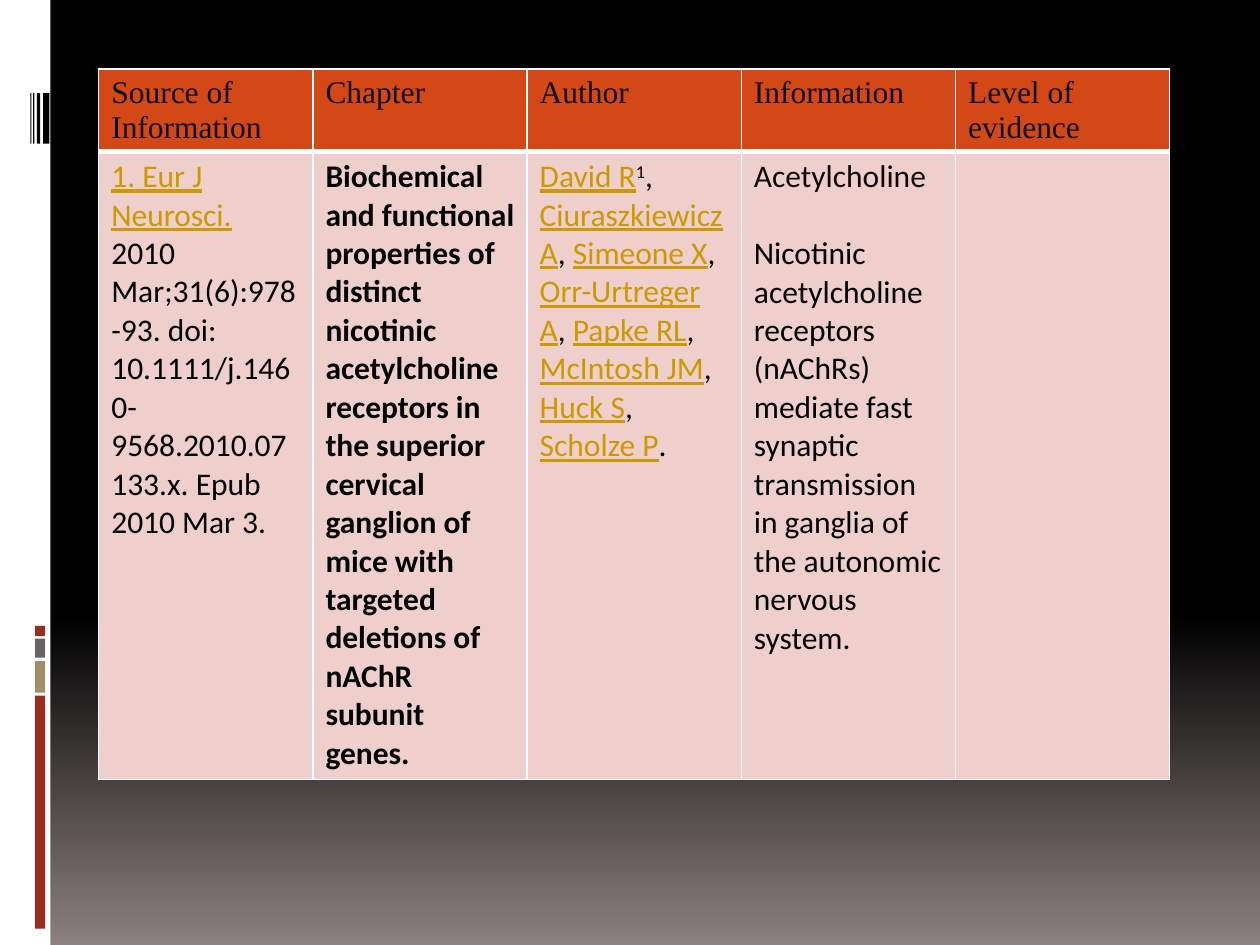
"""Build the literature evidence table slide."""
from copy import deepcopy

from lxml import etree
from pptx import Presentation
from pptx import util as u
from pptx.dml.color import RGBColor
from pptx.enum import shapes
from pptx.oxml.ns import qn

WHITE = RGBColor(0xFF, 0xFF, 0xFF)
BLACK = RGBColor(0, 0, 0)
SMOKE = RGBColor(0x8C, 0x80, 0x80)
RED = RGBColor(0x9B, 0x2D, 0x1F)
SAND = RGBColor(0xA2, 0x8E, 0x6A)
GREY = RGBColor(0x69, 0x64, 0x64)
ORANGE = RGBColor(0xD3, 0x48, 0x17)
PINK = RGBColor(0xEF, 0xCF, 0xCC)
INK = RGBColor(0x0F, 0x0A, 0x08)
GOLD = RGBColor(0xCC, 0x99, 0x00)


def add_span(para, words, color=BLACK, name="Calibri", bold=False, underline=False):
    span = para.add_run()
    span.text = words
    span.font.size = u.Pt(18)
    span.font.name = name
    span.font.bold = bold
    span.font.underline = underline
    span.font.color.rgb = color
    return span


def style_cell(cell, color, top, bottom):
    properties = cell._tc.get_or_add_tcPr()
    for side, width in (("lnL", 1), ("lnR", 1), ("lnT", top), ("lnB", bottom)):
        line = etree.SubElement(properties, qn(f"a:{side}"), w=str(u.Pt(width)))
        paint = etree.SubElement(line, qn("a:solidFill"))
        etree.SubElement(paint, qn("a:srgbClr"), val=str(WHITE))
    cell.fill.solid()
    cell.fill.fore_color.rgb = color


deck = Presentation()
deck.slide_width, deck.slide_height = u.Pt(720), u.Pt(540)
page = deck.slides.add_slide(deck.slide_layouts[6])

backdrop = page.background.fill
backdrop.gradient()
backdrop.gradient_angle = 270
start, end = backdrop.gradient_stops
start.color.rgb, start.position = BLACK, 0
end.color.rgb, end.position = SMOKE, 1
stop_list = page._element.find(".//" + qn("a:gsLst"))
middle = deepcopy(stop_list[0])
middle.set("pos", "65000")
stop_list.insert(1, middle)

decorations = [
    (0, 0, 28.8, 540, WHITE),
    (20, 397.5, 5.8, 133.2, RED),
    (20, 377.8, 5.8, 18, SAND),
    (20, 365, 5.8, 10.8, GREY),
    (20, 357.7, 5.8, 5.8, RED),
]
barcode = [(24.6, 3.6), (21, 2), (19, 0.7), (17.3, 0.7)]
decorations += [(left, 53.3, width, 28.8, BLACK) for left, width in barcode]
for left, top, width, height, color in decorations:
    box = page.shapes.add_shape(
        shapes.MSO_SHAPE.RECTANGLE, u.Pt(left), u.Pt(top), u.Pt(width), u.Pt(height))
    box.shadow.inherit = False
    box.fill.solid()
    box.fill.fore_color.rgb = color
    box.line.fill.background()

headings = ["Source of Information", "Chapter", "Author", "Information", "Level of evidence"]
table = page.shapes.add_table(
    2, len(headings), u.Pt(56.4), u.Pt(39.4), u.Pt(612), u.Pt(406)).table
table.rows[0].height, table.rows[1].height = u.Pt(47), u.Pt(359)
for index, heading in enumerate(headings):
    table.columns[index].width = u.Pt(122.4)
    style_cell(table.cell(0, index), ORANGE, 1, 3)
    style_cell(table.cell(1, index), PINK, 3, 1)
    add_span(table.cell(0, index).text_frame.paragraphs[0], heading, INK, "Times New Roman")

source, chapter, author, information = [
    table.cell(1, index).text_frame.paragraphs[0] for index in range(4)]
add_span(source, "1. Eur J Neurosci.", GOLD, underline=True)
add_span(source, " 2010 Mar;31(6):978-93. doi: 10.1111/j.1460-9568.2010.07133.x. Epub 2010 Mar 3.")
add_span(chapter, "Biochemical and functional properties of distinct nicotinic acetylcholine "
         "receptors in the superior cervical ganglion of mice with targeted deletions of "
         "nAChR subunit genes.", bold=True)

people = ["David R", "Ciuraszkiewicz A", "Simeone X", "Orr-Urtreger A", "Papke RL",
          "McIntosh JM", "Huck S", "Scholze P"]
for person in people:
    add_span(author, person, GOLD, underline=True)
    if person == people[0]:
        mark = add_span(author, "1")
        mark._r.get_or_add_rPr().set("baseline", "30000")
    add_span(author, "." if person == people[-1] else ", ")

add_span(information, "Acetylcholine", INK)
summary = table.cell(1, 3).text_frame.add_paragraph()
summary.space_before = u.Pt(22)
add_span(summary, "Nicotinic acetylcholine receptors (nAChRs) mediate fast synaptic "
         "transmission in ganglia of the autonomic nervous system.")

deck.save("out.pptx")
